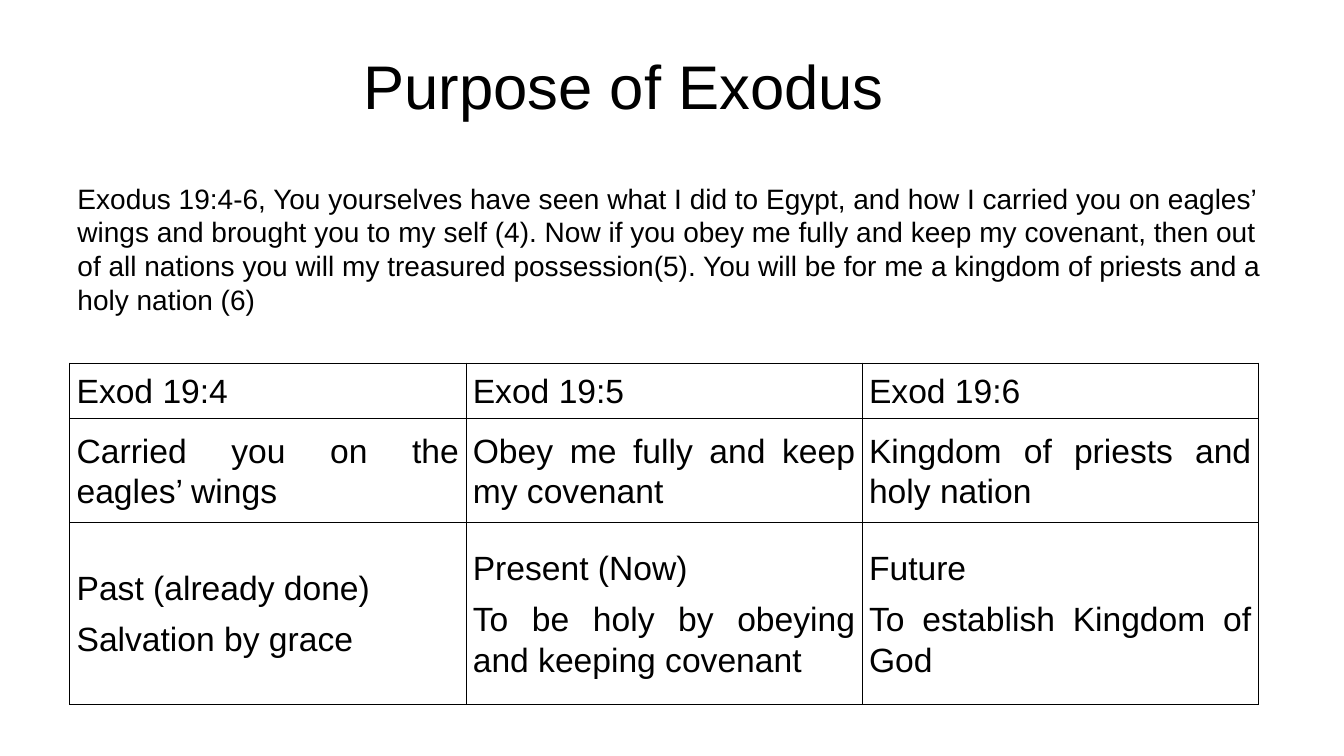
import pptx
import pptx.util
import pptx.dml.color
import pptx.enum.text
import pptx.oxml
import pptx.oxml.ns
from lxml import etree

PX = 9144  # EMU per px, 100 px to the inch
FONT = "Arial"
BLACK = pptx.dml.color.RGBColor(0, 0, 0)
ALIGN = pptx.enum.text.PP_ALIGN
MIDDLE = pptx.enum.text.MSO_ANCHOR.MIDDLE

TITLE = "Purpose of Exodus"
VERSE = (
    "Exodus 19:4-6, You yourselves have seen what I did to Egypt, and how I "
    "carried you on eagles’ wings and brought you to my self (4). Now if you "
    "obey me fully and keep my covenant, then out of all nations you will my "
    "treasured possession(5). You will be for me a kingdom of priests and a "
    "holy nation (6)"
)
# Each cell is a list of paragraphs
ROWS = [
    [["Exod 19:4"], ["Exod 19:5"], ["Exod 19:6"]],
    [["Carried you on the eagles’ wings"],
     ["Obey me fully and keep my covenant"],
     ["Kingdom of priests and holy nation"]],
    [["Past (already done)", "Salvation by grace"],
     ["Present (Now)", "To be holy by obeying and keeping covenant"],
     ["Future", "To establish Kingdom of God"]],
]
COL_WIDTH = 393
ROW_HEIGHTS = [55, 103, 181]


def px(n):
    return pptx.util.Emu(n * PX)


def add_run(p, text, size):
    r = p.add_run()
    r.text = text
    r.font.name = FONT
    r.font.size = pptx.util.Pt(size)
    r.font.bold = False
    r.font.color.rgb = BLACK


def add_text(s, box, text, size, align, anchor):
    tf = s.shapes.add_textbox(*map(px, box)).text_frame
    tf.word_wrap = True
    tf.vertical_anchor = anchor
    p = tf.paragraphs[0]
    p.alignment = align
    add_run(p, text, size)
    return p


def set_borders(cell):
    tcPr = cell._tc.get_or_add_tcPr()
    for i, side in enumerate(("lnL", "lnR", "lnT", "lnB")):
        ln = pptx.oxml.parse_xml(
            f'<a:{side} {pptx.oxml.ns.nsdecls("a")} w="3556"><a:solidFill>'
            f'<a:srgbClr val="{BLACK}"/></a:solidFill></a:{side}>')
        tcPr.insert(i, ln)


def fill_cell(cell, texts):
    cell.fill.background()
    cell.vertical_anchor = MIDDLE
    cell.margin_left = cell.margin_right = px(7)
    cell.margin_top = cell.margin_bottom = px(2)
    tf = cell.text_frame
    for i, text in enumerate(texts):
        p = tf.add_paragraph() if i else tf.paragraphs[0]
        p.alignment = ALIGN.JUSTIFY
        p.line_spacing = 1.07
        p.space_after = pptx.util.Pt(8)
        add_run(p, text, 24)
    set_borders(cell)


def add_grid(s, left, top):
    cols = len(ROWS[0])
    table = s.shapes.add_table(
        len(ROWS), cols, px(left), px(top),
        px(cols * COL_WIDTH), px(sum(ROW_HEIGHTS))).table
    table.first_row = table.horz_banding = False
    for col in table.columns:
        col.width = px(COL_WIDTH)
    for i, (height, row) in enumerate(zip(ROW_HEIGHTS, ROWS)):
        table.rows[i].height = px(height)
        for j, texts in enumerate(row):
            fill_cell(table.cell(i, j), texts)


def main():
    prs = pptx.Presentation()
    prs.slide_width, prs.slide_height = px(1333), px(750)
    s = prs.slides.add_slide(prs.slide_layouts[6])

    # Title
    add_text(s, (67, 22, 1104, 125), TITLE, 44, ALIGN.CENTER, MIDDLE)

    # Bible passage
    p = add_text(s, (67, 175, 1200, 495), VERSE, 20, ALIGN.LEFT,
                 pptx.enum.text.MSO_ANCHOR.TOP)
    p.space_before = pptx.util.Pt(4)

    # Verse-by-verse table
    add_grid(s, 69, 360)

    prs.save("out.pptx")


if __name__ == "__main__":
    main()
